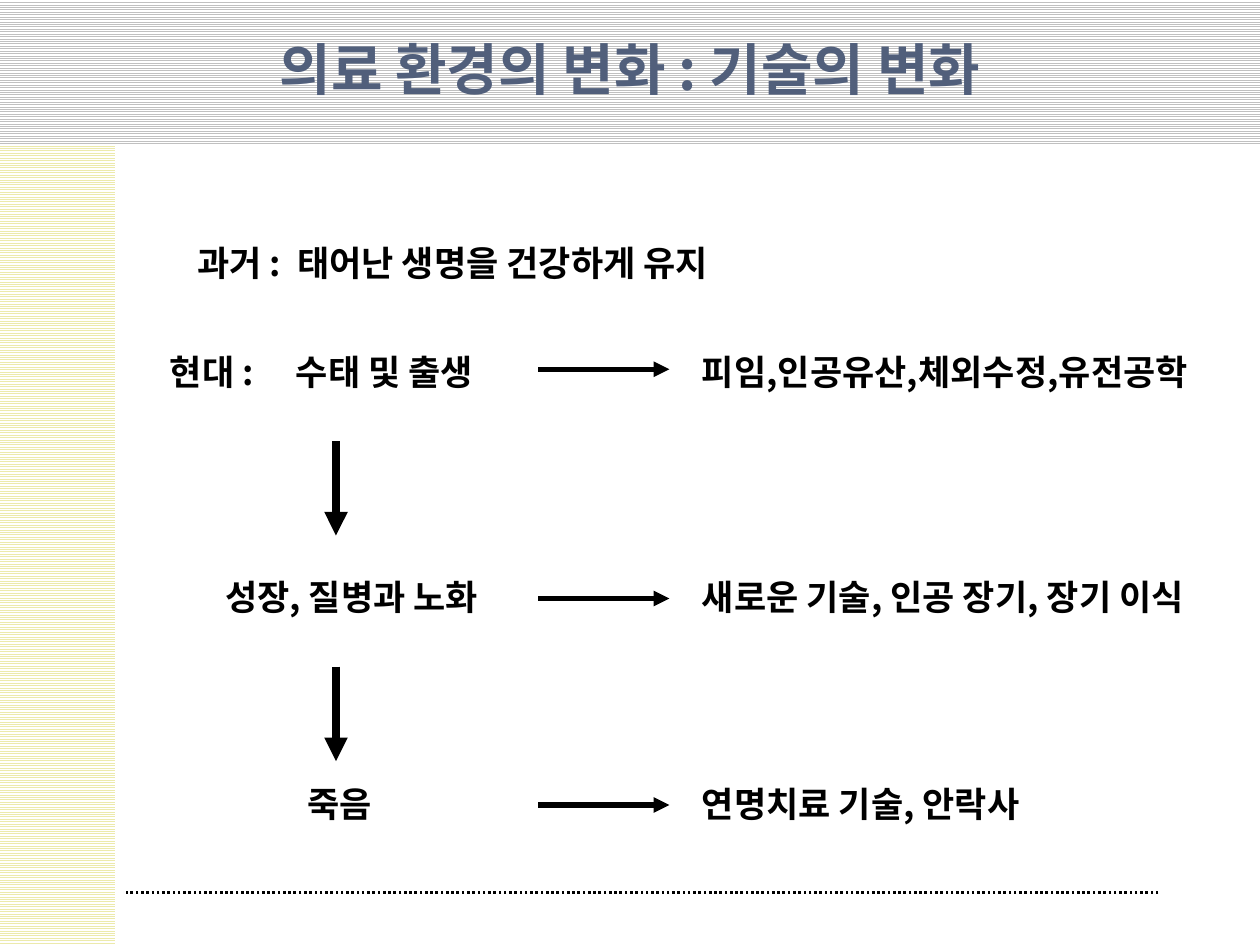
from lxml.etree import SubElement
from pptx import Presentation
from pptx.dml.color import RGBColor
from pptx.enum.dml import MSO_LINE, MSO_PATTERN
from pptx.enum.shapes import MSO_CONNECTOR, MSO_SHAPE
from pptx.enum.text import MSO_ANCHOR, MSO_AUTO_SIZE, PP_ALIGN
from pptx.oxml.ns import qn
from pptx.util import Pt

FONT = "Noto Sans CJK KR"
BLACK = RGBColor(0x00, 0x00, 0x00)
WHITE = RGBColor(0xFF, 0xFF, 0xFF)
SLATE = RGBColor(0x51, 0x5F, 0x7B)
SILVER = RGBColor(0xC0, 0xC0, 0xC0)
CREAM = RGBColor(0xEC, 0xEA, 0xAC)

STAGES = [
    (90, 202, 196.5, 211, "현대 : \t수태 및 출생", "피임,인공유산,체외수정,유전공학"),
    (121.5, 182, 325.5, 342, "성장, 질병과 노화", "새로운 기술, 인공 장기, 장기 이식"),
    (168.5, 55, 443.5, 460, "죽음", "연명치료 기술, 안락사"),
]


def add_band(slide, width, height, color):
    """Add a striped rectangle from the top left corner."""
    shape = slide.shapes.add_shape(MSO_SHAPE.RECTANGLE, 0, 0, Pt(width), Pt(height))
    shape.shadow.inherit = False
    shape.line.fill.background()
    shape.fill.patterned()
    shape.fill.pattern = MSO_PATTERN.LIGHT_HORIZONTAL
    shape.fill.fore_color.rgb = color
    shape.fill.back_color.rgb = WHITE


def add_line(slide, start, end, weight):
    """Add a plain black line between two points."""
    connector = slide.shapes.add_connector(
        MSO_CONNECTOR.STRAIGHT, *(Pt(value) for value in (*start, *end)))
    connector.line.color.rgb = BLACK
    connector.line.width = Pt(weight)
    SubElement(connector.element.spPr, qn("a:effectLst"))
    return connector


def add_arrow(slide, start, end, weight):
    """Add a line with a triangle at its end."""
    connector = add_line(slide, start, end, weight)
    SubElement(connector.line._get_or_add_ln(), qn("a:tailEnd"), type="triangle")


def add_text(paragraph, text, size, color):
    """Add one bold run in the slide font."""
    run = paragraph.add_run()
    run.text = text
    run.font.name = FONT
    run.font.size = Pt(size)
    run.font.bold = True
    run.font.color.rgb = color
    SubElement(run.font._element, qn("a:ea"), typeface=FONT)


def add_label(slide, left, top, width, text, height=31.5, wrap=False):
    """Add a text box and return its paragraph."""
    box = slide.shapes.add_textbox(Pt(left), Pt(top), Pt(width), Pt(height))
    box.text_frame.word_wrap = wrap
    box.text_frame.auto_size = MSO_AUTO_SIZE.SHAPE_TO_FIT_TEXT
    paragraph = box.text_frame.paragraphs[0]
    add_text(paragraph, text, 20, BLACK)
    return paragraph


def set_title(slide, text):
    """Place the title in front of the header band."""
    title = slide.shapes.title
    title.element.getparent().append(title.element)
    title.left, title.top, title.width, title.height = Pt(54), Pt(22.5), Pt(612), Pt(39.5)
    title.text_frame.vertical_anchor = MSO_ANCHOR.BOTTOM
    title.text_frame.auto_size = MSO_AUTO_SIZE.NONE
    paragraph = title.text_frame.paragraphs[0]
    paragraph.alignment = PP_ALIGN.CENTER
    add_text(paragraph, text, 32, SLATE)


def main():
    """Build and save the slide."""
    presentation = Presentation()
    presentation.slide_width, presentation.slide_height = Pt(720), Pt(540)
    slide = presentation.slides.add_slide(presentation.slide_layouts[5])

    add_band(slide, 66, 540, CREAM)
    footer_line = add_line(slide, (662, 510), (72, 510), 1.5)
    footer_line.line.dash_style = MSO_LINE.ROUND_DOT
    add_band(slide, 720, 82.5, SILVER)
    set_title(slide, "의료 환경의 변화 : 기술의 변화")

    past = add_label(slide, 67.5, 127.5, 382.5, "과거 :  태어난 생명을 건강하게 유지", 35.5, True)
    past.alignment = PP_ALIGN.CENTER
    past.line_spacing = 1.3

    for left, width, top, arrow_y, stage, technology in STAGES:
        add_label(slide, left, top, width, stage)
        add_arrow(slide, (307.5, arrow_y), (382.5, arrow_y), 3)
        add_label(slide, 394, top, 326, technology)
    for top in (252, 381):
        add_arrow(slide, (192, top), (192, top + 54), 4.5)

    presentation.save("out.pptx")


if __name__ == "__main__":
    main()
